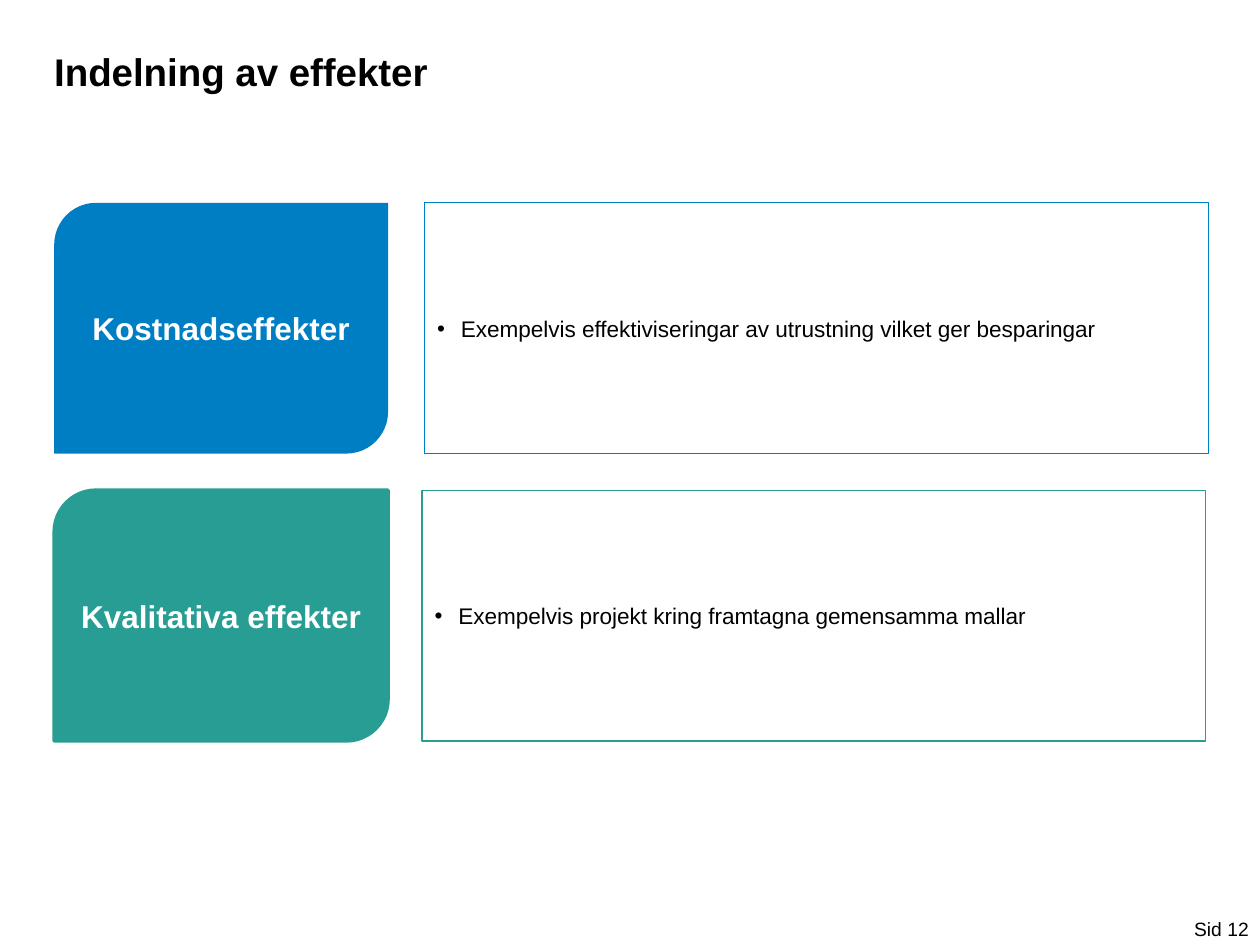
from lxml import etree
from pptx import Presentation
from pptx import util as u
from pptx.dml.color import RGBColor
from pptx.enum import shapes, text
from pptx.oxml.ns import qn

BLUE = RGBColor(0x00, 0x7E, 0xC4)
TEAL = RGBColor(0x28, 0x9D, 0x93)
WHITE = RGBColor(0xFF, 0xFF, 0xFF)
BLACK = RGBColor(0x00, 0x00, 0x00)

LEFT, TOP = 0.43, 1.61
ROW_HEIGHT, ROW_STEP = 1.99, 2.28
LABEL_WIDTH, DETAIL_WIDTH = 2.65, 6.22

EFFECTS = [
    ("Kostnadseffekter", BLUE, None, 3.37,
     "Exempelvis effektiviseringar av utrustning vilket ger besparingar"),
    ("Kvalitativa effekter", TEAL, 2, 3.35,
     "Exempelvis projekt kring framtagna gemensamma mallar"),
]


def add_panel(kind, left, top, width, fill, line, line_width):
    panel = slide.shapes.add_shape(kind, u.Inches(left), u.Inches(top),
                                   u.Inches(width), u.Inches(ROW_HEIGHT))
    panel.shadow.inherit = False
    panel.fill.solid()
    panel.fill.fore_color.rgb = fill
    if line_width:
        panel.line.color.rgb = line
        panel.line.width = u.Pt(line_width)
    else:
        panel.line.fill.background()
    panel.text_frame.word_wrap = True
    panel.text_frame.vertical_anchor = text.MSO_ANCHOR.MIDDLE
    return panel.text_frame.paragraphs[0]


def add_run(paragraph, words, size, color, bold=False):
    run = paragraph.add_run()
    run.text = words
    run.font.name = "Arial"
    run.font.size = u.Pt(size)
    run.font.bold = bold
    run.font.color.rgb = color


prs = Presentation()
prs.slide_width, prs.slide_height = u.Inches(10), u.Inches(7.5)
slide = prs.slides.add_slide(prs.slide_layouts[5])

title = slide.shapes.title
title.left, title.top = u.Inches(LEFT), u.Inches(0.33)
title.width, title.height = u.Inches(9.14), u.Inches(0.82)
title.text_frame.margin_left = 0
title.text_frame.vertical_anchor = text.MSO_ANCHOR.TOP
heading = title.text_frame.paragraphs[0]
heading.alignment = text.PP_ALIGN.LEFT
add_run(heading, "Indelning av effekter", 22, BLACK, True)

for row, (effect, color, outline, detail_left, example) in enumerate(EFFECTS):
    top = TOP + row * ROW_STEP

    label = add_panel(shapes.MSO_SHAPE.ROUND_2_DIAG_RECTANGLE, LEFT, top,
                      LABEL_WIDTH, color, color, outline)
    label.alignment = text.PP_ALIGN.CENTER
    add_run(label, effect, 18, WHITE, True)

    detail = add_panel(shapes.MSO_SHAPE.RECTANGLE, detail_left, top,
                       DETAIL_WIDTH, WHITE, color, 0.75)
    detail.alignment = text.PP_ALIGN.LEFT
    detail.space_after = u.Pt(4)
    props = detail._p.get_or_add_pPr()
    props.set("marL", str(u.Inches(0.19)))
    props.set("indent", str(-u.Inches(0.19)))
    etree.SubElement(props, qn("a:buFont")).set("typeface", "Arial")
    etree.SubElement(props, qn("a:buChar")).set("char", "•")
    add_run(detail, example, 12.9, BLACK)

page = slide.shapes.add_textbox(u.Inches(9.06), u.Inches(7.25),
                                u.Inches(0.95), u.Inches(0.24))
page.text_frame.word_wrap = True
page.text_frame.vertical_anchor = text.MSO_ANCHOR.MIDDLE
page_number = page.text_frame.paragraphs[0]
page_number.alignment = text.PP_ALIGN.RIGHT
add_run(page_number, "Sid 12", 11, BLACK)

prs.save("out.pptx")
